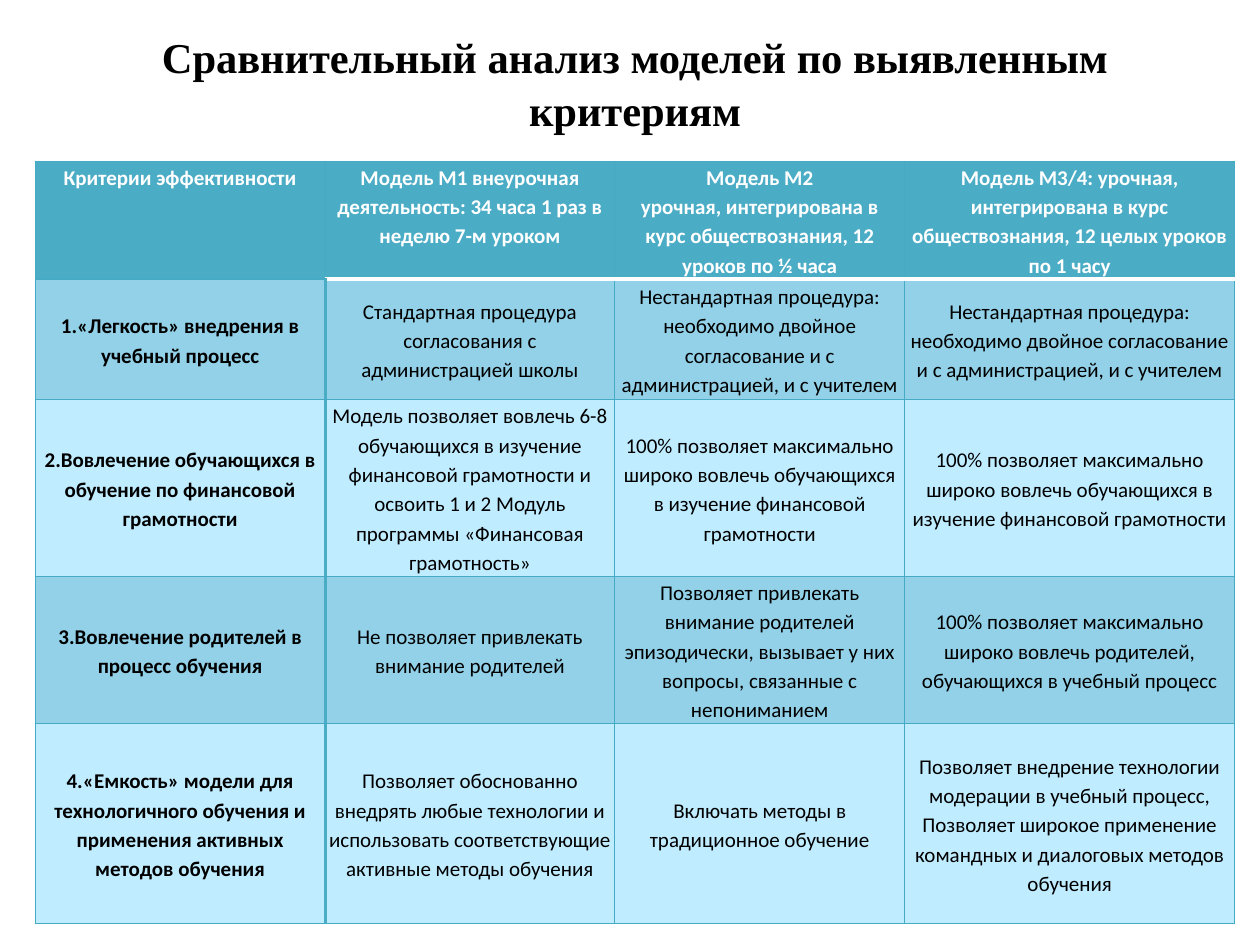
from dataclasses import dataclass

from lxml import etree
from pptx import Presentation
from pptx.dml.color import RGBColor
from pptx.enum import text as tx
from pptx.oxml import ns
from pptx.util import Inches, Pt


@dataclass(frozen=True)
class Theme:
    head: str = "4BACC6"
    dark: str = "92D1E8"
    light: str = "C0ECFF"
    line: str = "46AAC5"
    white: str = "FFFFFF"
    black: str = "000000"
    serif: str = "Times New Roman"
    sans: str = "Calibri"
    title: float = 24.3
    body: float = 12
    thin: float = 0.75
    thick: float = 2


THEME = Theme()
TITLE = "Сравнительный анализ моделей по выявленным критериям"
DOUBLE = ("Нестандартная процедура: необходимо двойное согласование "
          "и с администрацией, и с учителем")
WIDE = ("100% позволяет максимально широко вовлечь обучающихся "
        "в изучение финансовой грамотности")
ROWS = [
    ["Критерии эффективности",
     "Модель М1 внеурочная деятельность: 34 часа 1 раз в неделю 7-м уроком",
     "Модель М2\nурочная, интегрирована в курс обществознания, "
     "12 уроков по ½ часа",
     "Модель М3/4: урочная, интегрирована в курс обществознания, "
     "12 целых уроков по 1 часу"],
    ["1.«Легкость» внедрения в учебный процесс",
     "Стандартная процедура согласования с администрацией школы",
     DOUBLE, DOUBLE],
    ["2.Вовлечение обучающихся в обучение по финансовой грамотности",
     "Модель позволяет вовлечь 6-8 обучающихся в изучение финансовой "
     "грамотности и освоить 1 и 2 Модуль программы «Финансовая грамотность»",
     WIDE, WIDE],
    ["3.Вовлечение родителей в процесс обучения",
     "Не позволяет привлекать внимание родителей",
     "Позволяет привлекать внимание родителей эпизодически, "
     "вызывает у них вопросы, связанные с непониманием",
     "100% позволяет максимально широко вовлечь родителей, "
     "обучающихся в учебный процесс"],
    ["4.«Емкость» модели для технологичного обучения и применения "
     "активных методов обучения",
     "Позволяет обоснованно внедрять любые технологии и использовать "
     "соответствующие активные методы обучения",
     "Включать методы в традиционное обучение",
     "Позволяет внедрение технологии модерации в учебный процесс,\n"
     "Позволяет широкое применение командных и диалоговых методов обучения"],
]
WIDTHS = [2.3, 2.3, 2.3, 2.62]
HEIGHTS = [0.89, 0.96, 1.34, 1.12, 1.59]


def style(frame, font, size, color, bold, gap):
    for para in frame.paragraphs:
        para.alignment = tx.PP_ALIGN.CENTER
        para.line_spacing = gap
        for run in para.runs:
            run.font.name = font
            run.font.size = Pt(size)
            run.font.bold = bold
            run.font.color.rgb = RGBColor.from_string(color)


def add_title(slide):
    title = slide.shapes.title
    title.left, title.top = Inches(0.54), Inches(0.13)
    title.width, title.height = Inches(9), Inches(1.04)
    frame = title.text_frame
    frame.text = TITLE
    frame.word_wrap = True
    frame.vertical_anchor = tx.MSO_ANCHOR.MIDDLE
    style(frame, THEME.serif, THEME.title, THEME.black, True, 1.04)


def set_edges(cell, edges):
    """Draw borders; edges maps L, R, T, B to (colour, points)."""
    props = cell._tc.get_or_add_tcPr()
    for spot, side in enumerate("LRTB"):
        color, size = edges[side]
        line = etree.Element(ns.qn(f"a:ln{side}"), w=str(Pt(size)))
        fill = etree.SubElement(line, ns.qn("a:solidFill"))
        etree.SubElement(fill, ns.qn("a:srgbClr"), val=color)
        props.insert(spot, line)


def pick_edges(row, col):
    thin = (THEME.line, THEME.thin)
    edges = dict.fromkeys("LRTB", thin)
    if row and col < 2:
        edges["R" if col == 0 else "L"] = (THEME.head, THEME.thick)
    if row < 2 and col:
        edges["B" if row == 0 else "T"] = (THEME.white, THEME.thick)
    return edges


def fill_cell(cell, row, col):
    head = row == 0
    cell.text_frame.text = ROWS[row][col]
    cell.margin_left = cell.margin_right = Inches(0.03)
    cell.margin_top = cell.margin_bottom = 0
    cell.vertical_anchor = tx.MSO_ANCHOR.TOP if head else tx.MSO_ANCHOR.MIDDLE
    style(cell.text_frame, THEME.sans, THEME.body,
          THEME.white if head else THEME.black, head or col == 0, 1.15)
    band = THEME.dark if row % 2 else THEME.light
    cell.fill.solid()
    cell.fill.fore_color.rgb = RGBColor.from_string(THEME.head if head else band)
    set_edges(cell, pick_edges(row, col))


def add_grid(slide):
    table = slide.shapes.add_table(
        len(ROWS), len(WIDTHS), Inches(0.28), Inches(1.28),
        Inches(sum(WIDTHS)), Inches(sum(HEIGHTS))).table
    for col, width in enumerate(WIDTHS):
        table.columns[col].width = Inches(width)
    for row, height in enumerate(HEIGHTS):
        table.rows[row].height = Inches(height)
        for col in range(len(WIDTHS)):
            fill_cell(table.cell(row, col), row, col)


def main():
    deck = Presentation()
    deck.slide_width, deck.slide_height = Inches(10), Inches(7.5)
    slide = deck.slides.add_slide(deck.slide_layouts[5])
    add_title(slide)
    add_grid(slide)
    deck.save("out.pptx")


if __name__ == "__main__":
    main()
